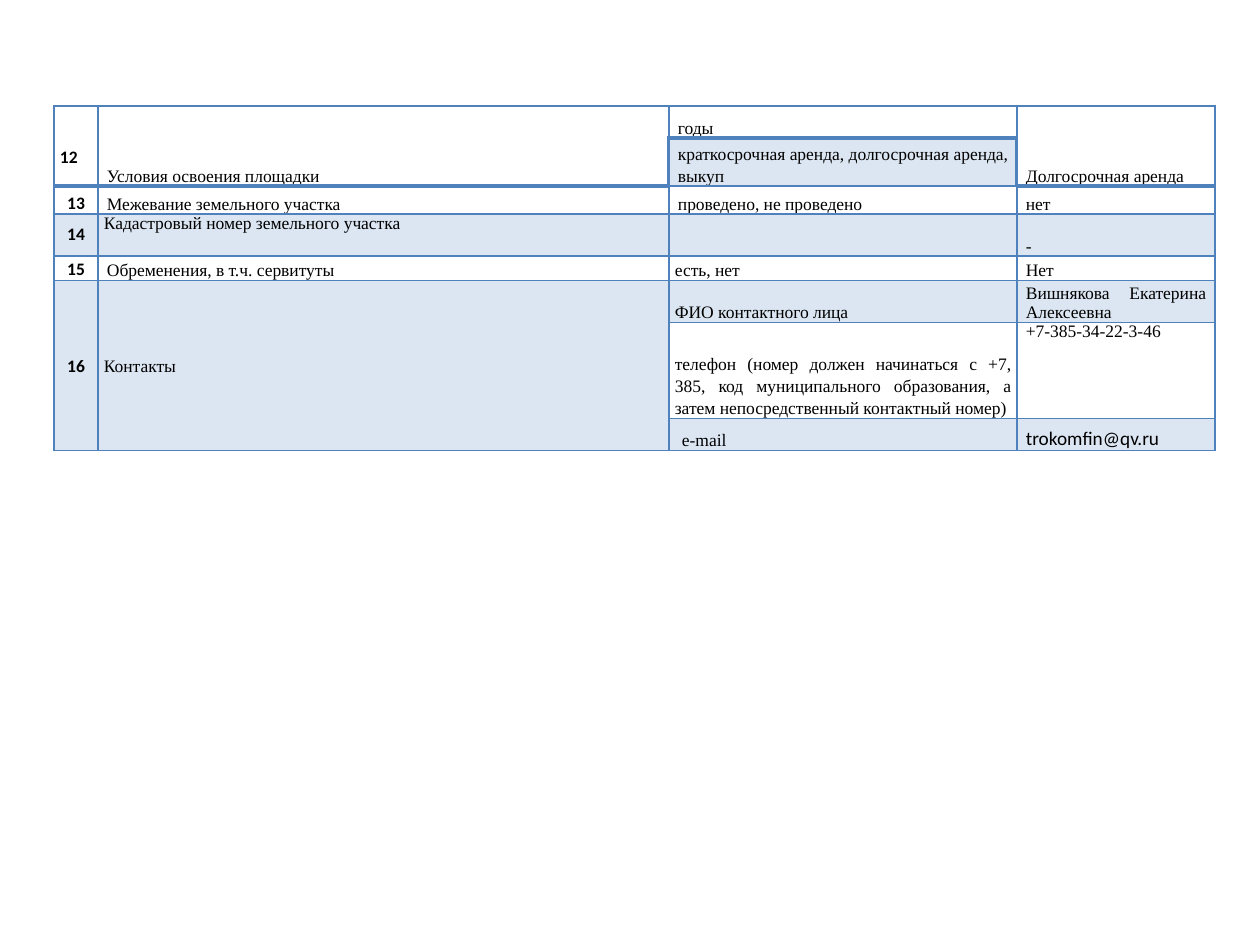
from dataclasses import dataclass

from lxml.etree import SubElement
from pptx import Presentation
from pptx.dml.color import RGBColor
from pptx.enum.text import MSO_ANCHOR as ANCHOR, PP_ALIGN as ALIGN
from pptx.oxml.ns import qn
from pptx.util import Pt

PX = 914400 // 126


@dataclass(frozen=True)
class Theme:
    line: str = "4F81BD"
    band: RGBColor = RGBColor(0xDC, 0xE6, 0xF2)
    ink: RGBColor = RGBColor(0, 0, 0)
    serif: str = "Times New Roman"
    sans: str = "Calibri"
    text: int = 10
    email: int = 11
    thin: int = 1
    thick: int = 2


theme = Theme()


def set_border(cell, side, width):
    """Draw one side (L, R, T or B) of a cell, width in points."""
    ln = SubElement(cell._tc.get_or_add_tcPr(), qn(f"a:ln{side}"), w=str(Pt(width)))
    fill = SubElement(ln, qn("a:solidFill"))
    SubElement(fill, qn("a:srgbClr"), val=theme.line)


prs = Presentation()
prs.slide_width, prs.slide_height = 1260 * PX, 945 * PX
s = prs.slides.add_slide(prs.slide_layouts[6])

col_widths = [44, 571, 348, 198]
row_heights = [32, 48, 28, 42, 24, 42, 96, 32]
table = s.shapes.add_table(
    len(row_heights), len(col_widths), 54 * PX, 106 * PX,
    sum(col_widths) * PX, sum(row_heights) * PX,
).table
table.first_row = table.horz_banding = False
for column, width in zip(table.columns, col_widths):
    column.width = width * PX
for row, height in zip(table.rows, row_heights):
    row.height = height * PX

banded = {(1, 2), (5, 0), (5, 1), (5, 2), (5, 3), (7, 2), (7, 3)}
banded |= {(3, c) for c in range(4)}
thick_sides = {
    (0, 0): "B", (0, 1): "B", (0, 2): "B", (0, 3): "B",
    (1, 0): "B", (1, 1): "RB", (1, 2): "LRT", (1, 3): "LB",
    (2, 0): "T", (2, 1): "T", (2, 3): "T",
}
for r in range(len(row_heights)):
    for c in range(len(col_widths)):
        cell = table.cell(r, c)
        cell.margin_left = cell.margin_right = 0
        cell.margin_top = cell.margin_bottom = 0
        for side in "LRTB":
            thick = side in thick_sides.get((r, c), "")
            set_border(cell, side, theme.thick if thick else theme.thin)
        if (r, c) in banded:
            cell.fill.solid()
            cell.fill.fore_color.rgb = theme.band
        else:
            cell.fill.background()

for first, last, columns in [(0, 1, (0, 1, 3)), (5, 7, (0, 1))]:
    for c in columns:
        table.cell(first, c).merge(table.cell(last, c))

LEFT, CENTER, JUST = ALIGN.LEFT, ALIGN.CENTER, ALIGN.JUSTIFY
TOP, MID, BOTTOM = ANCHOR.TOP, ANCHOR.MIDDLE, ANCHOR.BOTTOM
# row, column, text, alignment, anchor, side inset, line spacing
entries = [
    (0, 0, "12", LEFT, BOTTOM, 6, 1.15),
    (0, 1, "Условия освоения площадки", LEFT, BOTTOM, 9, 1.15),
    (0, 2, "годы", JUST, BOTTOM, 9, 1.15),
    (0, 3, "Долгосрочная аренда", LEFT, BOTTOM, 9, 1),
    (1, 2, "краткосрочная аренда, долгосрочная аренда, выкуп", JUST, BOTTOM, 9, 1.15),
    (2, 0, "13", CENTER, BOTTOM, 9, 1.15),
    (2, 1, "Межевание земельного участка", LEFT, BOTTOM, 9, 1.15),
    (2, 2, "проведено, не проведено", LEFT, BOTTOM, 9, 1.15),
    (2, 3, "нет", JUST, BOTTOM, 9, 1),
    (3, 0, "14", CENTER, MID, 6, 1),
    (3, 1, "Кадастровый номер земельного участка", LEFT, TOP, 6, 1),
    (3, 3, "-", JUST, BOTTOM, 9, 1),
    (4, 0, "15", CENTER, MID, 6, 1.15),
    (4, 1, "Обременения, в т.ч. сервитуты", LEFT, BOTTOM, 9, 1.15),
    (4, 2, "есть, нет", JUST, BOTTOM, 6, 1.15),
    (4, 3, "Нет", JUST, BOTTOM, 9, 1),
    (5, 0, "16", CENTER, MID, 6, 1.15),
    (5, 1, "Контакты", LEFT, MID, 6, 1.15),
    (5, 2, "ФИО контактного лица", JUST, BOTTOM, 6, 1.15),
    (5, 3, "Вишнякова Екатерина Алексеевна", JUST, BOTTOM, 9, 1),
    (6, 2, "телефон (номер должен начинаться с +7, 385, код муниципального "
           "образования, а затем непосредственный контактный номер)",
     JUST, BOTTOM, 6, 1.15),
    (6, 3, "+7-385-34-22-3-46", LEFT, TOP, 9, 1),
    (7, 2, "e-mail", JUST, BOTTOM, 13, 1.15),
    (7, 3, "trokomfin@qv.ru", JUST, BOTTOM, 9, 1),
]
for row, col, text, align, anchor, inset, spacing in entries:
    cell = table.cell(row, col)
    cell.vertical_anchor = anchor
    cell.margin_left = cell.margin_right = inset * PX
    p = cell.text_frame.paragraphs[0]
    p.alignment, p.line_spacing = align, spacing
    r = p.add_run()
    r.text = text
    is_email = "@" in text
    r.font.name = theme.sans if col == 0 or is_email else theme.serif
    r.font.size = Pt(theme.email if is_email else theme.text)
    r.font.bold = col == 0
    r.font.color.rgb = theme.ink

# The first number sits one line above the bottom of its cell
table.cell(0, 0).margin_bottom = 18 * PX

prs.save("out.pptx")
